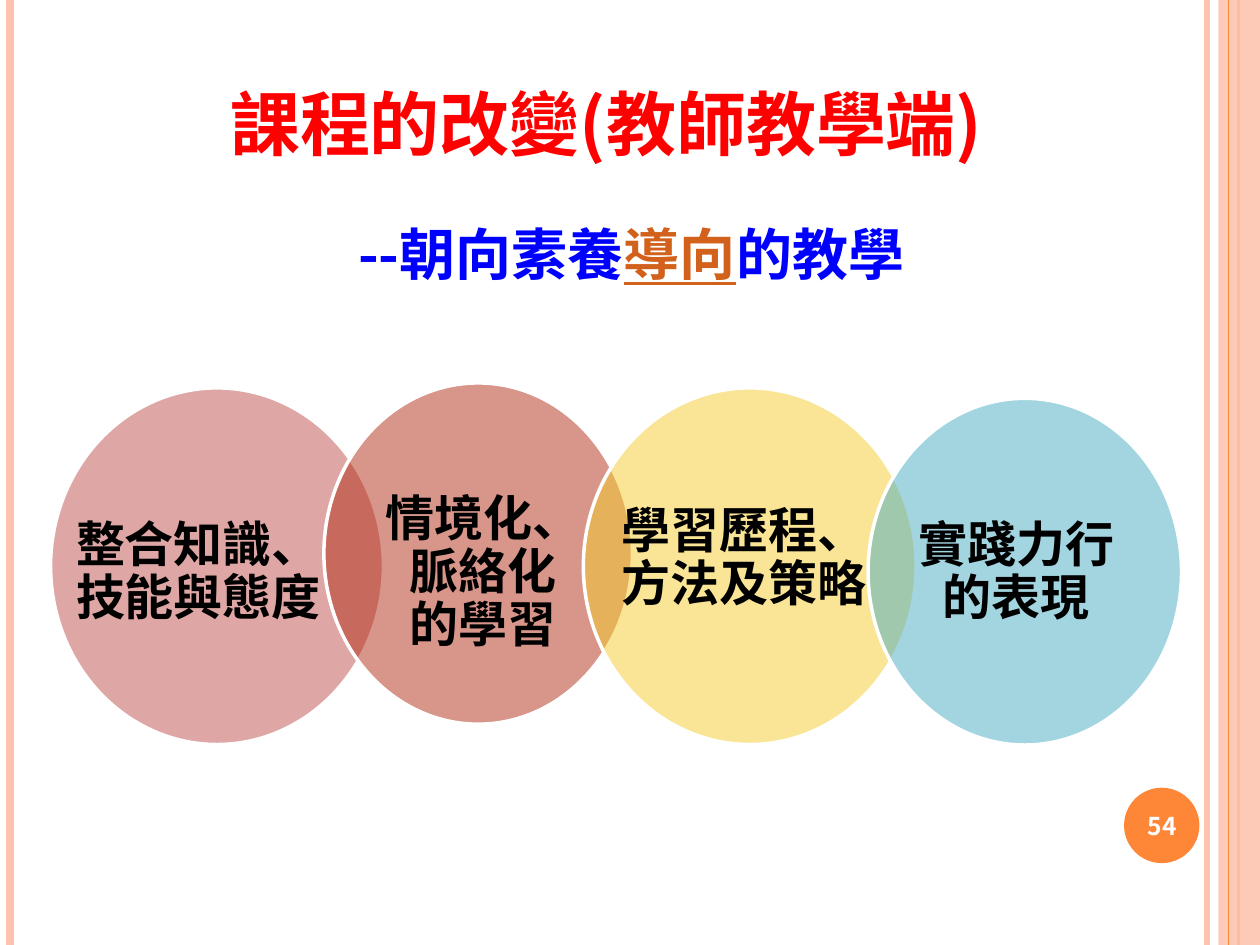
"""Build the slide on competency-oriented teaching with four overlapping circles."""
from lxml.etree import SubElement
from pptx import Presentation
from pptx.dml.color import RGBColor
from pptx.enum.shapes import MSO_CONNECTOR as Connector, MSO_SHAPE as Shape
from pptx.enum.text import MSO_ANCHOR as Anchor, PP_ALIGN as Align
from pptx.oxml.ns import qn
from pptx.util import Cm, Pt

FONT = "Noto Sans CJK SC"
WIDTH, HEIGHT = 25.4, 19.05


def paint(color_format, color, opacity=100):
    color_format.rgb = RGBColor.from_string(color)
    if opacity < 100:
        tint = color_format._xFill.find(qn("a:srgbClr"))
        SubElement(tint, qn("a:alpha"), val=str(opacity * 1000))


def add_solid(page, kind, bounds, color, opacity=100):
    shape = page.shapes.add_shape(kind, *map(Cm, bounds))
    shape.shadow.inherit = False
    shape.fill.solid()
    paint(shape.fill.fore_color, color)
    if opacity < 100:
        tint = shape.fill._xPr.find(qn("a:solidFill")).find(qn("a:srgbClr"))
        SubElement(tint, qn("a:alpha"), val=str(opacity * 1000))
    shape.line.fill.background()
    return shape


deck = Presentation()
deck.slide_width, deck.slide_height = Cm(WIDTH), Cm(HEIGHT)
page = deck.slides.add_slide(deck.slide_layouts[6])

stripes = [
    (24.33, "FEC3AE", 3),
    (0.2, "FEC3AE", 4.5),
    (24.97, "FE8637", 1.5),
    (24.77, "FE8637", 0.75),
]
for left, color, weight in stripes:
    if left == 24.77:
        add_solid(page, Shape.RECTANGLE, (24.56, 0, 0.84, HEIGHT), "FEC3AE", 87)
    stripe = page.shapes.add_connector(
        Connector.STRAIGHT, Cm(left), Cm(0), Cm(left), Cm(HEIGHT))
    stripe.line.width = Pt(weight)
    paint(stripe.line.color, color)
    SubElement(stripe._element.spPr, qn("a:effectLst"))

add_solid(page, Shape.OVAL, (22.66, 15.88, 1.52, 1.52), "FE8637")

circles = [
    (1.02, 7.82, 6.71, 7.19, "BF504D"),
    (6.53, 7.72, 6.22, 6.88, "B32C16"),
    (11.76, 7.82, 6.71, 7.19, "F5CD2D"),
    (17.5, 8.03, 6.32, 6.99, "49ACC5"),
]
for *bounds, color in circles:
    circle = add_solid(page, Shape.OVAL, bounds, color, 50)
    circle.line.width = Pt(2)
    paint(circle.line.color, "FFFFFF")

heading = (0.25, 0.13, Anchor.TOP, 1)
badge = (0.25, 0.13, Anchor.MIDDLE, 1)
label = (0.38, 0.1, Anchor.MIDDLE, 0.9)
texts = [
    ((2.31, 4.29, 20.83, 3.38), heading, Align.CENTER, 32, "0000FF",
     [["--朝向素養", "導向", "的教學"]]),
    ((22.58, 15.93, 1.7, 1.45), badge, Align.CENTER, 14, "FFFFFF", [["54"]]),
    ((1.14, 8.92, 5.72, 5.28), label, Align.CENTER, 28, "000000",
     [["整合知識、"], ["技能與態度"]]),
    ((7.37, 8.92, 4.75, 5.28), label, Align.CENTER, 28, "000000",
     [["情境化、脈絡化"], ["的學習"]]),
    ((12.14, 8.64, 5.72, 5.28), label, Align.CENTER, 28, "000000",
     [["學習歷程、"], ["方法及策略"]]),
    ((18.11, 8.92, 4.75, 5.28), label, Align.CENTER, 28, "000000",
     [["實踐力行的表現"]]),
    ((4.39, 1.5, 16.41, 1.96), heading, Align.LEFT, 40, "FF0000",
     [["課程的改變(教師教學端)"]]),
]
for bounds, style, align, size, color, lines in texts:
    side, edge, anchor, spacing = style
    frame = page.shapes.add_textbox(*map(Cm, bounds)).text_frame
    frame.word_wrap = True
    frame.vertical_anchor = anchor
    frame.margin_left = frame.margin_right = Cm(side)
    frame.margin_top = frame.margin_bottom = Cm(edge)
    for index, words in enumerate(lines):
        para = frame.add_paragraph() if index else frame.paragraphs[0]
        para.alignment = align
        para.line_spacing = spacing
        for word in words:
            span = para.add_run()
            span.text = word
            span.font.size = Pt(size)
            span.font.bold = True
            span.font.name = FONT
            SubElement(span.font._element, qn("a:ea"), typeface=FONT)
            stressed = word == "導向"
            span.font.underline = stressed
            paint(span.font.color, "D2611C" if stressed else color)

deck.save("out.pptx")
